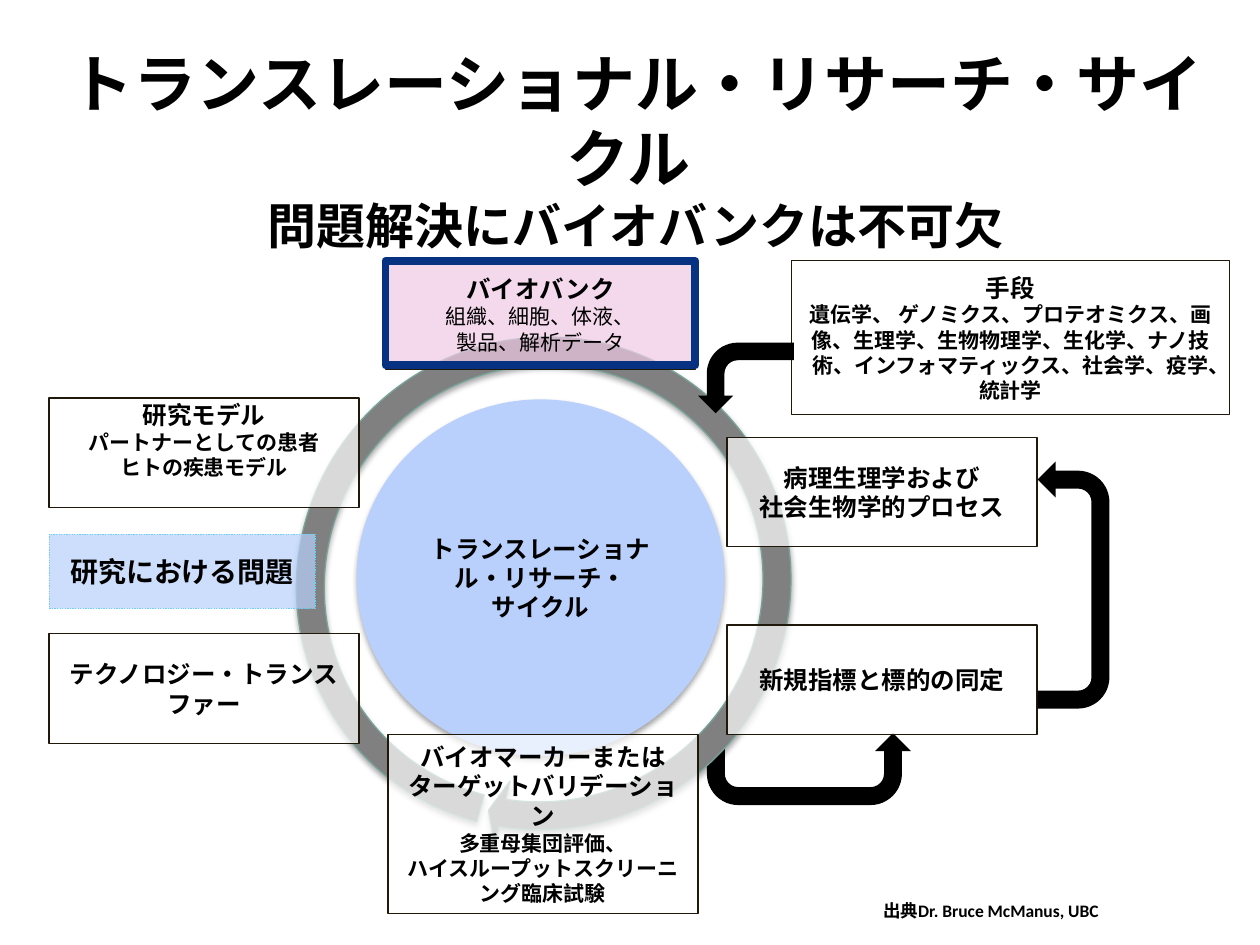
from lxml import etree
from pptx import Presentation
from pptx import util as u
from pptx.dml.color import RGBColor
from pptx.enum import dml, shapes, text
from pptx.oxml.ns import qn

BLACK = RGBColor(0, 0, 0)
WHITE = RGBColor(0xFF, 0xFF, 0xFF)
PINK = RGBColor(0xF0, 0xCA, 0xE5)
BLUE = RGBColor(0xB8, 0xD0, 0xFB)
NAVY = RGBColor(0x07, 0x32, 0x81)
SKY = RGBColor(0x6D, 0xCF, 0xF6)
GRAY = RGBColor(0x80, 0x80, 0x80)
GREEN = RGBColor(0x77, 0xA4, 0x9A)
BROWN = RGBColor(0x20, 0x19, 0x0B)
KIND = shapes.MSO_SHAPE

deck = Presentation()
deck.slide_width, deck.slide_height = u.Inches(10), u.Inches(7.5)
slide = deck.slides.add_slide(deck.slide_layouts[6])
COL, ROW = deck.slide_width / 100, deck.slide_height / 100  # percent of the slide


def draw(kind, x, y, w, h, fill=None, line=None, width=0.75, alpha=None):
    """Add a shape placed in percent of the slide, without theme effects."""
    form = slide.shapes.add_shape(
        kind, int(x * COL), int(y * ROW), int(w * COL), int(h * ROW))
    form.shadow.inherit = False
    if fill is None:
        form.fill.background()
    else:
        form.fill.solid()
        form.fill.fore_color.rgb = fill
    if alpha:
        tint = form.fill._xPr.find(qn("a:solidFill"))[0]
        etree.SubElement(tint, qn("a:alpha"), val=str(alpha * 1000))
    if line is None:
        form.line.fill.background()
    else:
        form.line.color.rgb = line
        form.line.width = u.Pt(width)
    return form


def write(form, words, size=14, small=12, face="Arial", bold=True):
    """Fill a shape: newline starts a paragraph, | breaks to the small size."""
    frame = form.text_frame
    frame.word_wrap = True
    now, strong = size, True
    for i, part in enumerate(words.split("\n")):
        para = frame.paragraphs[0] if i == 0 else frame.add_paragraph()
        para.alignment = text.PP_ALIGN.CENTER
        para.font.name, para.font.color.rgb = face, BLACK
        for j, bit in enumerate(part.split("|")):
            if j:
                para.add_line_break()
                now, strong = small, bold
            run = para.add_run()
            run.text = bit
            font = run.font
            font.name, font.size, font.bold = face, u.Pt(now), strong
            font.color.rgb = BLACK


# Title and source
title = draw(KIND.RECTANGLE, 4.2, 4, 92.5, 14.8)
title.text_frame.vertical_anchor = text.MSO_ANCHOR.TOP
write(title, "トランスレーショナル・リサーチ・サイクル |問題解決にバイオバンクは不可欠",
      36, 28, "Calibri")
credit = draw(KIND.RECTANGLE, 57.5, 93.73, 42.3, 5.33)
write(credit, "出典Dr. Bruce McManus, UBC", 10, face="Calibri")
frame = credit.text_frame
frame.margin_left = frame.margin_right = frame.margin_top = frame.margin_bottom = 0

# Cycle
UTURN = (0.25, 0.25, 0.25, 0.438, 1)
lower = draw(KIND.U_TURN_ARROW, 56.1, 77.6, 16.2, 7.6, BLACK)
disc = draw(KIND.OVAL, 28.3, 42.27, 29.2, 37.73, BLUE)
write(disc, "トランスレーショナル・リサーチ・\nサイクル")
ring = draw(KIND.CIRCULAR_ARROW, 21.9, 33.87, 42.5, 55.73, GRAY, GREEN)
ring.rotation = 321.1
turns = (0.053, 3.439 * 0.6, 139.117 * 0.6, 144.592 * 0.6, 0.062)  # degrees * 0.6
for i, turn in enumerate(turns):
    ring.adjustments[i] = turn
for form in (disc, ring):
    glow = etree.SubElement(
        form._element.spPr.find(qn("a:effectLst")), qn("a:outerShdw"),
        blurRad=str(u.Pt(3.1)), dist=str(u.Pt(1.8)), dir="5400000", rotWithShape="0")
    tint = etree.SubElement(glow, qn("a:srgbClr"), val=str(BLACK))
    etree.SubElement(tint, qn("a:alpha"), val="35000")

# Stages around the cycle
WIDE, TALL = 24.6, 11.6
LEFT, RIGHT = 3.9, 57.7
stages = [
    (LEFT, 42.13, WIDE, TALL, WHITE,
     "研究モデル|パートナーとしての患者\nヒトの疾患モデル"),
    (30.6, 27.47, WIDE, TALL, PINK,
     "バイオバンク|組織、細胞、体液、\n製品、解析データ"),
    (RIGHT, 46.27, WIDE, TALL, WHITE, "病理生理学および\n社会生物学的プロセス"),
    (RIGHT, 66.13, WIDE, TALL, WHITE, "新規指標と標的の同定"),
    (30.8, 77.73, WIDE, 18.93, WHITE,
     "バイオマーカーまたは\nターゲットバリデーション|多重母集団評価、\n"
     "ハイスループットスクリーニング臨床試験"),
    (LEFT, 67.07, WIDE, TALL, WHITE, "テクノロジー・トランスファー"),
    (62.8, 27.6, 34.8, 16.27, WHITE,
     "手段|遺伝学、 ゲノミクス、プロテオミクス、画像、生理学、生物物理学、生化学、"
     "ナノ技術、インフォマティックス、社会学、疫学、統計学"),
]
for x, y, w, h, fill, words in stages:
    box = draw(KIND.RECTANGLE, x, y, w, h, fill, BROWN, alpha=70)
    write(box, words, bold=fill != PINK)
    if words.startswith("研究モデル"):
        box.text_frame.margin_bottom = u.Inches(0.25)

# Side arrows
side = draw(KIND.U_TURN_ARROW, 75.4, 58.13, 19.6, 7.6, BLACK)
bent = draw(KIND.BENT_ARROW, 56.4, 34.93, 5.6, 10.13, BLACK)
side.rotation = bent.rotation = 270
for form, flip in ((lower, "flipV"), (side, "flipV"), (bent, "flipH")):
    form._element.spPr.get_or_add_xfrm().set(flip, "1")
for form in (lower, side):
    for i, part in enumerate(UTURN):
        form.adjustments[i] = part

# Research question and biobank frame
query = draw(KIND.RECTANGLE, LEFT, 56.53, 21.1, 7.87, BLUE, SKY, alpha=70)
query.line.dash_style = dml.MSO_LINE.ROUND_DOT
write(query, "研究における問題", 16)
draw(KIND.RECTANGLE, 30.6, 27.6, WIDE, 11.07, line=NAVY, width=4.5)

deck.save("out.pptx")
